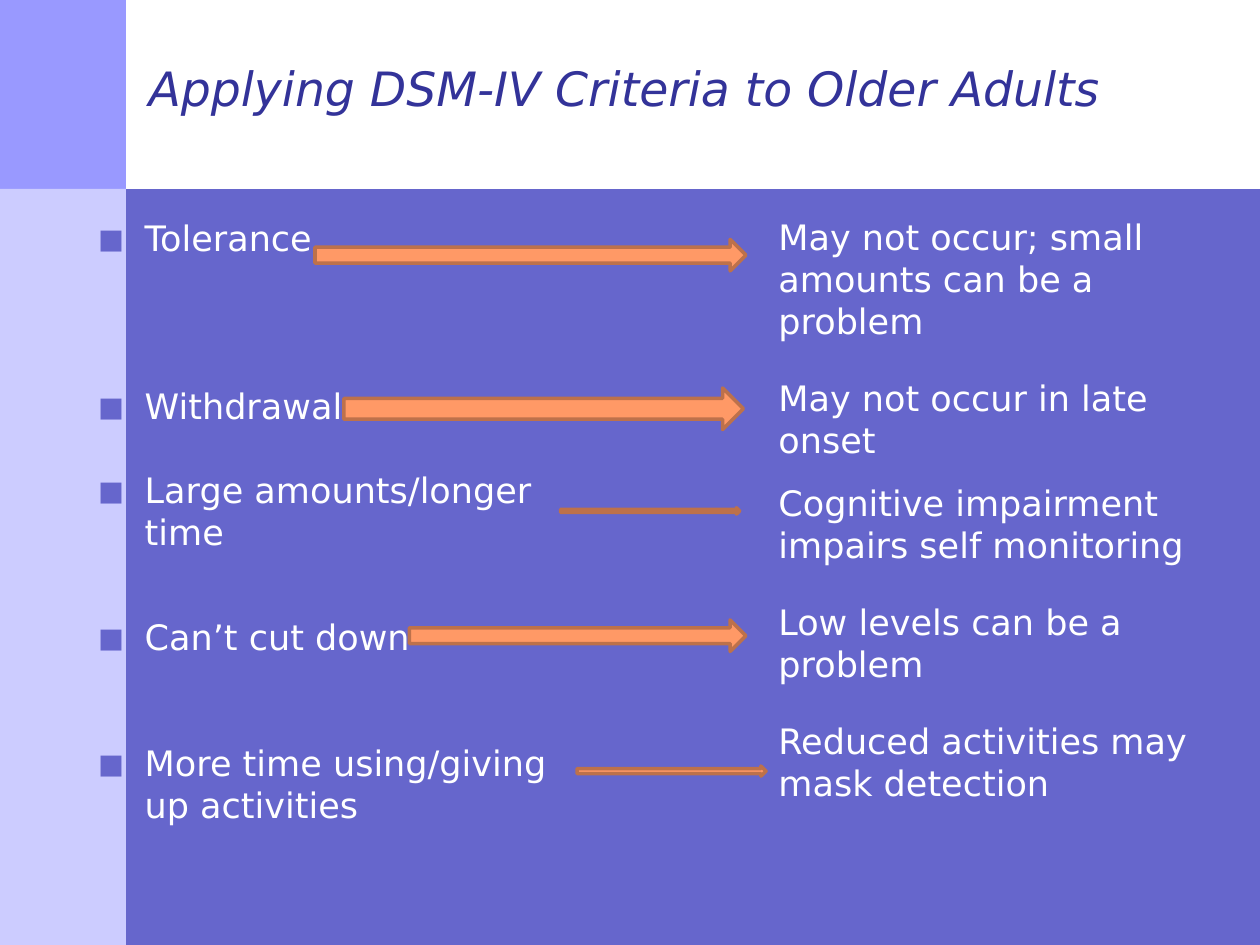
from dataclasses import dataclass

from lxml import etree
from pptx import Presentation
from pptx import util as u
from pptx.dml.color import RGBColor
from pptx.enum import shapes, text
from pptx.oxml import ns

WHITE = RGBColor(0xFF, 0xFF, 0xFF)
INDIGO = RGBColor(0x66, 0x66, 0xCC)
NAVY = RGBColor(0x33, 0x33, 0x99)
LAVENDER = RGBColor(0x99, 0x99, 0xFF)
PALE = RGBColor(0xCC, 0xCC, 0xFF)
ORANGE = RGBColor(0xFF, 0x99, 0x66)
BROWN = RGBColor(0xBD, 0x71, 0x4B)
FONT = "DejaVu Sans"


@dataclass(frozen=True)
class Area:
    left: float
    top: float
    width: float
    height: float

    def lengths(self) -> tuple:
        return tuple(map(u.Inches, (self.left, self.top, self.width, self.height)))


@dataclass(frozen=True)
class Band:
    area: Area
    color: RGBColor


@dataclass(frozen=True)
class Item:
    words: str
    space_before: int = 0


BANDS = [
    Band(Area(0, 0, 10, 1.5), WHITE),
    Band(Area(0, 0, 1, 1.5), LAVENDER),
    Band(Area(0, 1.5, 1, 6), PALE),
]
CRITERIA = [
    Item("Tolerance"),
    Item("Withdrawal", 72),
    Item("Large amounts/longer time", 24),
    Item("Can’t cut down", 36),
    Item("More time using/giving up activities", 48),
]
CAVEATS = [
    Item("May not occur; small amounts can be a problem"),
    Item("May not occur in late onset", 20),
    Item("Cognitive impairment impairs self monitoring", 12),
    Item("Low levels can be a problem", 20),
    Item("Reduced activities may mask detection", 20),
]
ARROWS = [
    Area(2.5, 1.9, 3.42, 0.25),
    Area(2.73, 3.08, 3.17, 0.33),
    Area(4.45, 4.03, 1.42, 0.05),
    Area(3.25, 4.92, 2.67, 0.25),
    Area(4.58, 6.08, 1.5, 0.08),
]


def add_band(page, band: Band) -> None:
    box = page.shapes.add_shape(shapes.MSO_SHAPE.RECTANGLE, *band.area.lengths())
    box.shadow.inherit = False
    box.fill.solid()
    box.fill.fore_color.rgb = band.color
    box.line.fill.background()


def add_arrow(page, area: Area) -> None:
    arrow = page.shapes.add_shape(shapes.MSO_SHAPE.RIGHT_ARROW, *area.lengths())
    arrow.shadow.inherit = False
    arrow.fill.solid()
    arrow.fill.fore_color.rgb = ORANGE
    arrow.line.color.rgb = BROWN
    arrow.line.width = u.Pt(2)


def add_bullet(para) -> None:
    properties = para._p.get_or_add_pPr()
    indent = u.Inches(0.38)
    properties.set("marL", str(indent))
    properties.set("indent", str(-indent))
    color = etree.SubElement(properties, ns.qn("a:buClr"))
    etree.SubElement(color, ns.qn("a:srgbClr"), val=str(INDIGO))
    etree.SubElement(properties, ns.qn("a:buSzPct"), val="120000")
    etree.SubElement(properties, ns.qn("a:buFont"), typeface=FONT)
    etree.SubElement(properties, ns.qn("a:buChar"), char="▪")


def set_font(para, size: int, color: RGBColor, italic: bool = False) -> None:
    para.font.name = FONT
    para.font.size = u.Pt(size)
    para.font.color.rgb = color
    para.font.italic = italic


def add_column(page, area: Area, items: list[Item], bulleted: bool) -> None:
    frame = page.shapes.add_textbox(*area.lengths()).text_frame
    frame.word_wrap = True
    for index, item in enumerate(items):
        para = frame.add_paragraph() if index else frame.paragraphs[0]
        para.text = item.words
        if bulleted:
            add_bullet(para)
        if item.space_before:
            para.space_before = u.Pt(item.space_before)
        set_font(para, 20, WHITE)


def set_title(page, area: Area, words: str) -> None:
    title = page.shapes.title
    title.left, title.top, title.width, title.height = area.lengths()
    frame = title.text_frame
    frame.text = words
    frame.word_wrap = True
    frame.auto_size = text.MSO_AUTO_SIZE.NONE
    frame.vertical_anchor = text.MSO_ANCHOR.TOP
    para = frame.paragraphs[0]
    para.alignment = text.PP_ALIGN.LEFT
    set_font(para, 27, NAVY, italic=True)
    title.element.getparent().append(title.element)


def main() -> None:
    deck = Presentation()
    deck.slide_width, deck.slide_height = u.Inches(10), u.Inches(7.5)
    page = deck.slides.add_slide(deck.slide_layouts[5])
    page.background.fill.solid()
    page.background.fill.fore_color.rgb = INDIGO
    for band in BANDS:
        add_band(page, band)
    set_title(page, Area(1.08, 0.42, 8.25, 1), "Applying DSM-IV Criteria to Older Adults")
    add_column(page, Area(0.67, 1.67, 3.92, 5.25), CRITERIA, bulleted=True)
    add_column(page, Area(6.08, 1.66, 3.5, 4.95), CAVEATS, bulleted=False)
    for area in ARROWS:
        add_arrow(page, area)
    deck.save("out.pptx")


if __name__ == "__main__":
    main()
